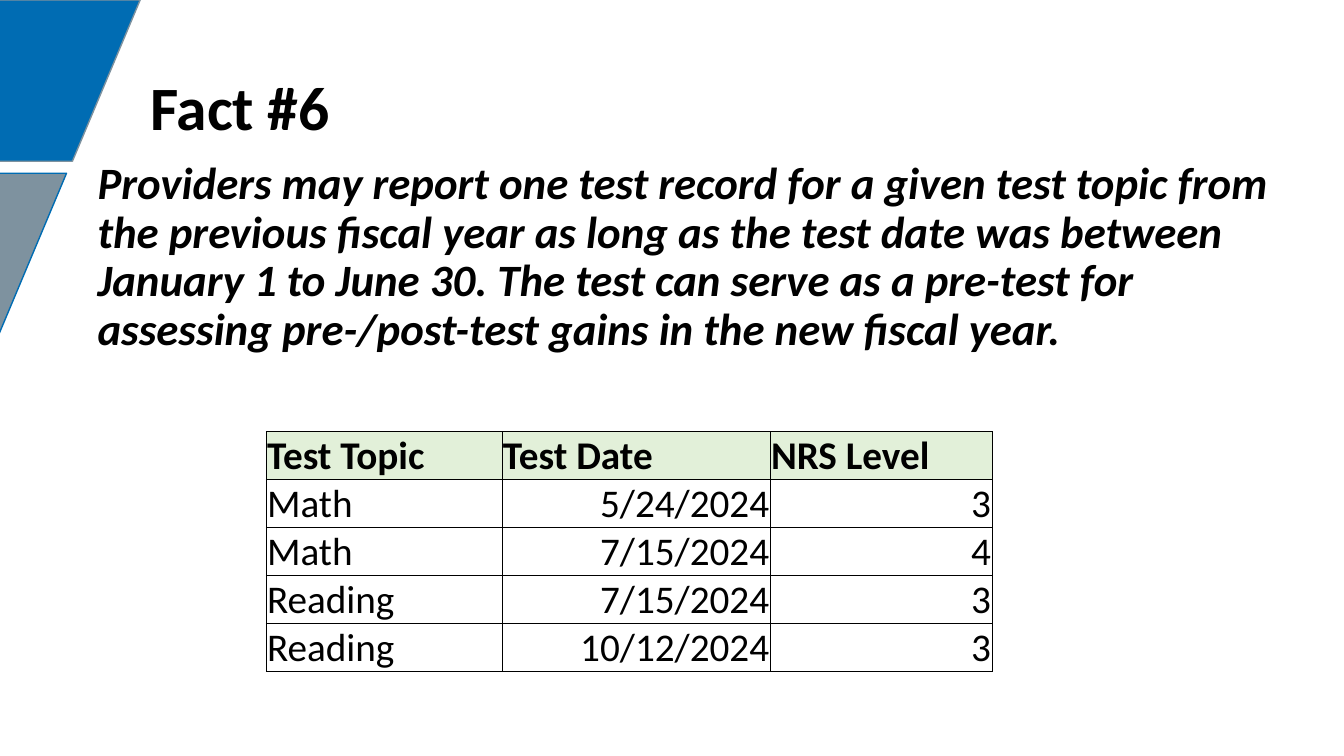
from lxml.etree import SubElement
from pptx import Presentation
from pptx.dml.color import RGBColor
from pptx.enum.shapes import MSO_SHAPE
from pptx.enum.text import MSO_ANCHOR, PP_ALIGN
from pptx.oxml.ns import qn
from pptx.util import Pt

TITLE = "Fact #6"
BODY = (
    "Providers may report one test record for a given test topic from the previous "
    "fiscal year as long as the test date was between January 1 to June 30. The test "
    "can serve as a pre-test for assessing pre-/post-test gains in the new fiscal year."
)
TESTS = [
    ("Test Topic", "Test Date", "NRS Level"),
    ("Math", "5/24/2024", "3"),
    ("Math", "7/15/2024", "4"),
    ("Reading", "7/15/2024", "3"),
    ("Reading", "10/12/2024", "3"),
]
COLUMN_WIDTHS = [168.5, 191.5, 158.4]
ROW_HEIGHT = 34.1
TABLE_LEFT, TABLE_TOP = 190.1, 308.2

BLUE, GRAY, BLACK, GREEN = "006CB3", "7E929F", "000000", "E2F0D9"
BANNERS = [(-141.8, 0, BLUE, GRAY), (-194.4, 123.8, GRAY, BLUE)]
BANNER_SIZE = (241.9, 115.2)


def color(value):
    return RGBColor.from_string(value)


def add_span(para, text, size, bold=False, italic=False):
    span = para.add_run()
    span.text = text
    font = span.font
    font.name, font.size = "Calibri", Pt(size)
    font.bold, font.italic = bold, italic
    font.color.rgb = color(BLACK)


def add_text(page, bounds, text, size, anchor, italic=False):
    box = page.shapes.add_textbox(*map(Pt, bounds))
    frame = box.text_frame
    frame.word_wrap = True
    frame.vertical_anchor = anchor
    para = frame.paragraphs[0]
    para.line_spacing = 0.9
    add_span(para, text, size, True, italic)


def add_banner(page, left, top, fill, line):
    banner = page.shapes.add_shape(
        MSO_SHAPE.FLOWCHART_DATA, Pt(left), Pt(top), *map(Pt, BANNER_SIZE)
    )
    banner.shadow.inherit = False
    banner.fill.solid()
    banner.fill.fore_color.rgb = color(fill)
    banner.line.color.rgb = color(line)
    banner.line.width = Pt(1)


def add_borders(cell):
    properties = cell._tc.get_or_add_tcPr()
    for index, side in enumerate(("lnL", "lnR", "lnT", "lnB")):
        border = properties.makeelement(qn(f"a:{side}"), {"w": str(Pt(0.5))})
        fill = SubElement(border, qn("a:solidFill"))
        SubElement(fill, qn("a:srgbClr"), val=BLACK)
        properties.insert(index, border)


def fill_cell(cell, text, header, align):
    cell.margin_left = cell.margin_right = cell.margin_top = Pt(0.7)
    cell.margin_bottom = Pt(0)
    cell.vertical_anchor = MSO_ANCHOR.BOTTOM
    if header:
        cell.fill.solid()
        cell.fill.fore_color.rgb = color(GREEN)
    else:
        cell.fill.background()
    add_borders(cell)
    para = cell.text_frame.paragraphs[0]
    para.alignment = align
    add_span(para, text, 28, header)


def add_tests(page):
    table = page.shapes.add_table(
        len(TESTS), len(COLUMN_WIDTHS), Pt(TABLE_LEFT), Pt(TABLE_TOP),
        Pt(sum(COLUMN_WIDTHS)), Pt(ROW_HEIGHT * len(TESTS)),
    ).table
    table.horz_banding = False
    for column, width in zip(table.columns, COLUMN_WIDTHS):
        column.width = Pt(width)
    for row, values in enumerate(TESTS):
        table.rows[row].height = Pt(ROW_HEIGHT)
        for column, value in enumerate(values):
            align = PP_ALIGN.RIGHT if row and column else PP_ALIGN.LEFT
            fill_cell(table.cell(row, column), value, row == 0, align)


def main():
    deck = Presentation()
    deck.slide_width, deck.slide_height = Pt(960), Pt(540)
    page = deck.slides.add_slide(deck.slide_layouts[6])
    for banner in BANNERS:
        add_banner(page, *banner)
    add_text(page, (100.1, 43.9, 663.8, 70.6), TITLE, 44, MSO_ANCHOR.MIDDLE)
    add_text(page, (62.6, 111.6, 858.2, 181.4), BODY, 32, MSO_ANCHOR.TOP, italic=True)
    add_tests(page)
    deck.save("out.pptx")


if __name__ == "__main__":
    main()
